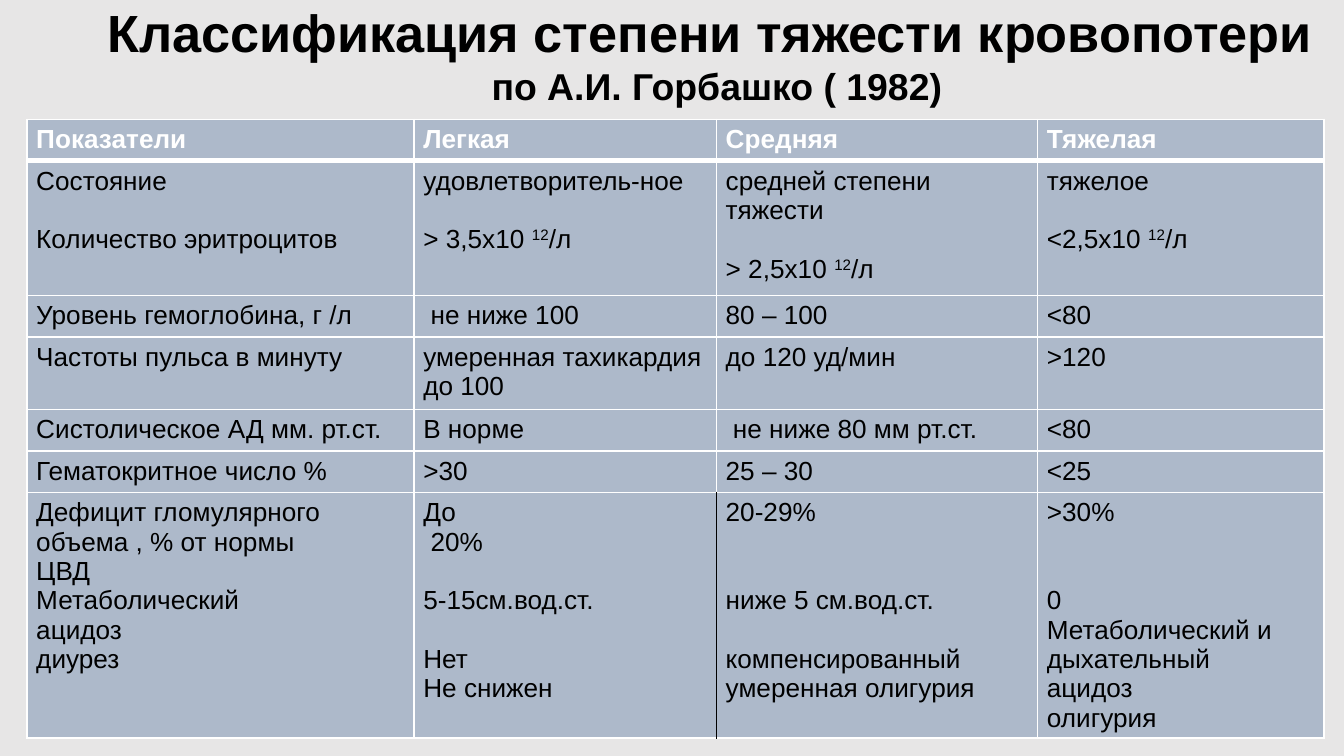
from lxml import etree
from pptx import Presentation
from pptx import util as u
from pptx.dml.color import RGBColor
from pptx.enum import text
from pptx.oxml.ns import qn

WIDE = 10
HIGH = WIDE * 9 / 16
INK, PAPER, STEEL, WHITE = "000000", "E7E6E6", "ADB9CA", "FFFFFF"

COLS = [28.8, 22.5, 23.9, 21.3]
ROWS = [5.5, 17.8, 5.5, 9.6, 5.5, 5.5, 31.6]

# An empty line opens a gap; text between carets is raised.
DATA = [
    ["Показатели", "Легкая", "Средняя", "Тяжелая"],
    ["Состояние\n\nКоличество эритроцитов",
     "удовлетворитель-ное\n\n> 3,5х10 ^12^/л",
     "средней степени тяжести\n\n> 2,5х10 ^12^/л",
     "тяжелое\n\n<2,5х10 ^12^/л"],
    ["Уровень гемоглобина, г /л", " не ниже 100", "80 – 100", "<80"],
    ["Частоты пульса в минуту", "умеренная тахикардия до 100",
     "до 120 уд/мин", ">120"],
    ["Систолическое АД мм. рт.ст.", "В норме", " не ниже 80 мм рт.ст.", "<80"],
    ["Гематокритное число %", ">30", "25 – 30", "<25"],
    ["Дефицит гломулярного объема , % от нормы\nЦВД\nМетаболический\n"
     "ацидоз\nдиурез",
     "До\n 20%\n\n5-15см.вод.ст.\n\nНет\nНе снижен",
     "20-29%\n\n\nниже 5 см.вод.ст.\n\nкомпенсированный\nумеренная олигурия",
     ">30%\n\n\n0\nМетаболический и дыхательный\nацидоз\nолигурия"],
]


def tint(code):
    return RGBColor.from_string(code)


def write(para, words, size=14, color=INK, bold=False, font="Arial"):
    """Add runs to a paragraph, raising the parts between carets."""
    for i, part in enumerate(words.split("^")):
        run = para.add_run()
        run.text = part
        run.font.size, run.font.bold, run.font.name = u.Pt(size), bold, font
        run.font.color.rgb = tint(color)
        if i % 2:
            run.font._element.set("baseline", "30000")


def fill_in(frame, words, size=14, **style):
    """Write lines as paragraphs, with empty lines as space before the next."""
    gap, first = 0, True
    for line in words.split("\n"):
        if not line:
            gap += 1
            continue
        para = frame.paragraphs[0] if first else frame.add_paragraph()
        if gap:
            para.space_before = u.Pt(gap * size * 1.12)
        write(para, line, size, **style)
        gap, first = 0, False


def edge(cell, side, color, width):
    line = etree.SubElement(cell._tc.get_or_add_tcPr(), qn("a:ln" + side),
                            w=str(u.Pt(width)))
    solid = etree.SubElement(line, qn("a:solidFill"))
    etree.SubElement(solid, qn("a:srgbClr"), val=color)


class Deck:
    """Style and current slide; lengths are percents of the slide's size."""

    def __init__(self):
        self.prs = Presentation()
        self.prs.slide_width = u.Inches(WIDE)
        self.prs.slide_height = u.Inches(HIGH)
        self.slide = self.prs.slides.add_slide(self.prs.slide_layouts[5])
        back = self.slide.background.fill
        back.solid()
        back.fore_color.rgb = tint(PAPER)

    def x(self, share):
        return u.Inches(WIDE * share / 100)

    def y(self, share):
        return u.Inches(HIGH * share / 100)

    def title(self, left, top, width, height, main, sub):
        box = self.slide.shapes.title
        box.left, box.top = self.x(left), self.y(top)
        box.width, box.height = self.x(width), self.y(height)
        frame = box.text_frame
        frame.word_wrap = True
        frame.auto_size = text.MSO_AUTO_SIZE.NONE
        frame.vertical_anchor = text.MSO_ANCHOR.MIDDLE
        para = frame.paragraphs[0]
        para.alignment = text.PP_ALIGN.CENTER
        write(para, main, 28, bold=True)
        para.add_line_break()
        write(para, sub, 20, bold=True)

    def table(self, left, top, cols, rows, data):
        grid = self.slide.shapes.add_table(
            len(rows), len(cols), self.x(left), self.y(top),
            self.x(sum(cols)), self.y(sum(rows))).table
        grid.horz_banding = False
        for col, share in zip(grid.columns, cols):
            col.width = self.x(share)
        for row, share in zip(grid.rows, rows):
            row.height = self.y(share)
        for r, line in enumerate(data):
            for c, words in enumerate(line):
                self.cell(grid.cell(r, c), words, r, c, r == len(rows) - 1)

    def cell(self, cell, words, r, c, last):
        cell.margin_left = cell.margin_right = u.Inches(0.07)
        cell.margin_top = cell.margin_bottom = u.Inches(0.04)
        head = r == 0
        dark = {(1, "R"), (2, "L")} if last else set()
        for side in "LRTB":
            thick = (head and side == "B") or (r == 1 and side == "T")
            edge(cell, side, INK if (c, side) in dark else WHITE,
                 3 if thick else 1)
        cell.fill.solid()
        cell.fill.fore_color.rgb = tint(STEEL)
        fill_in(cell.text_frame, words, color=WHITE if head else INK, bold=head)


def main():
    deck = Deck()
    deck.title(6.7, 0.3, 93.3, 13.7,
               "Классификация степени тяжести кровопотери ",
               "по А.И. Горбашко ( 1982)")
    deck.table(2, 15.8, COLS, ROWS, DATA)
    deck.prs.save("out.pptx")


if __name__ == "__main__":
    main()
